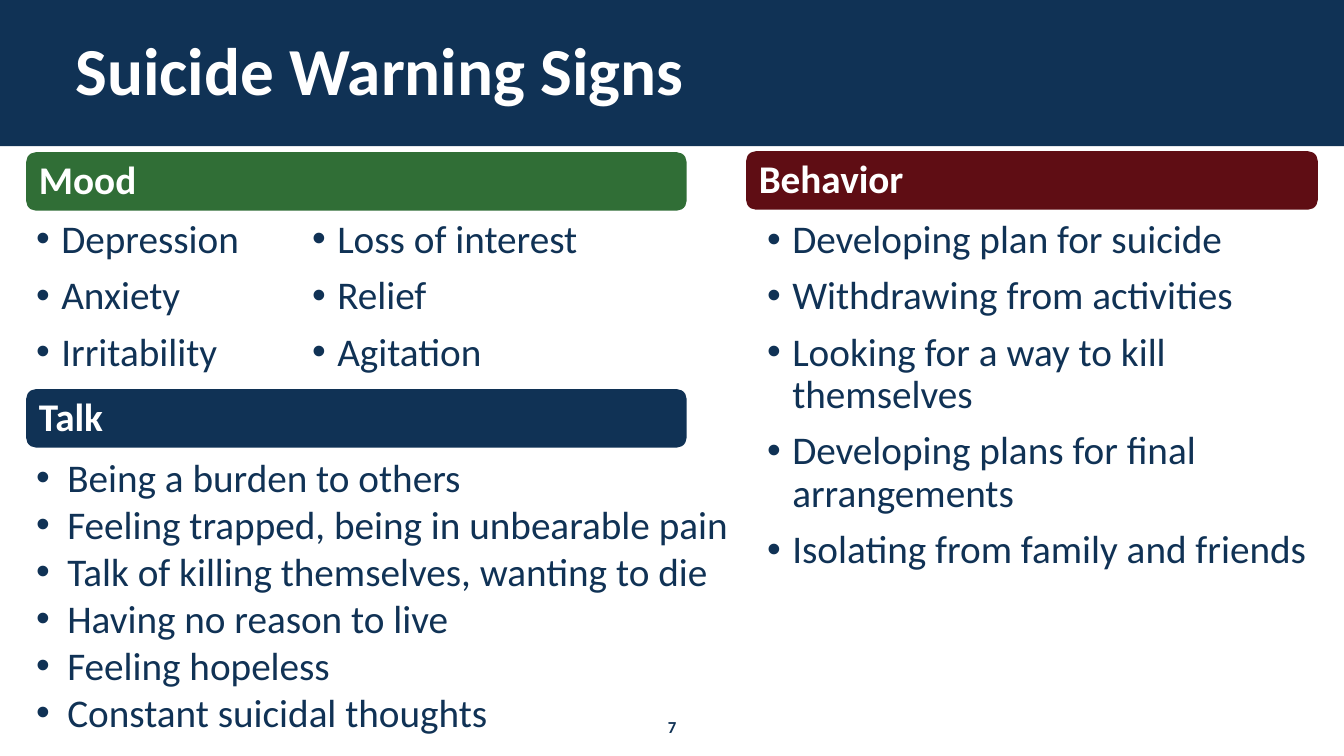
from dataclasses import dataclass

from pptx import Presentation
from pptx import util as u
from pptx.dml import color
from pptx.enum import shapes, text
from pptx.oxml import parse_xml
from pptx.oxml.ns import nsdecls


@dataclass(frozen=True)
class Theme:
    font: str = "Calibri"
    navy: str = "103255"
    green: str = "306E36"
    maroon: str = "5F0D14"
    white: str = "FFFFFF"
    title_size: int = 48
    body_size: int = 28
    number_size: int = 12
    line_spacing: float = 0.9
    paragraph_gap: int = 10


class SlideBuilder:
    """Places elements by percentages of the slide's width and height."""

    def __init__(self, presentation, theme):
        self.presentation = presentation
        self.theme = theme
        self.slide = presentation.slides.add_slide(presentation.slide_layouts[5])

    def box(self, left, top, width, height):
        across = self.presentation.slide_width / 100
        down = self.presentation.slide_height / 100
        return (u.Emu(round(left * across)), u.Emu(round(top * down)),
                u.Emu(round(width * across)), u.Emu(round(height * down)))

    def add_run(self, paragraph, words, size, ink, bold=False):
        run = paragraph.add_run()
        run.text = words
        run.font.name = self.theme.font
        run.font.size = u.Pt(size)
        run.font.bold = bold
        run.font.color.rgb = color.RGBColor.from_string(ink)

    def block(self, kind, place, fill):
        shape = self.slide.shapes.add_shape(kind, *self.box(*place))
        shape.shadow.inherit = False
        shape.fill.solid()
        shape.fill.fore_color.rgb = color.RGBColor.from_string(fill)
        shape.line.fill.background()
        return shape

    def title(self, words, place, banner_place):
        title = self.slide.shapes.title
        title.left, title.top, title.width, title.height = self.box(*place)
        frame = title.text_frame
        frame.word_wrap = True
        frame.auto_size = text.MSO_AUTO_SIZE.NONE
        frame.vertical_anchor = text.MSO_ANCHOR.MIDDLE
        paragraph = frame.paragraphs[0]
        paragraph.alignment = text.PP_ALIGN.LEFT
        paragraph.line_spacing = self.theme.line_spacing
        self.add_run(paragraph, words, self.theme.title_size, self.theme.white, True)
        # The banner lies behind the title
        banner = self.block(shapes.MSO_SHAPE.RECTANGLE, banner_place, self.theme.navy)
        title.element.addprevious(banner.element)

    def heading(self, words, place, fill):
        shape = self.block(shapes.MSO_SHAPE.ROUNDED_RECTANGLE, place, fill)
        shape.text_frame.vertical_anchor = text.MSO_ANCHOR.MIDDLE
        paragraph = shape.text_frame.paragraphs[0]
        paragraph.alignment = text.PP_ALIGN.LEFT
        paragraph.line_spacing = self.theme.line_spacing
        self.add_run(paragraph, words, self.theme.body_size, self.theme.white, True)

    def text_frame(self, place):
        frame = self.slide.shapes.add_textbox(*self.box(*place)).text_frame
        frame.word_wrap = True
        return frame

    def bullets(self, items, place, indent=0.25, spaced=True, columns=1):
        frame = self.text_frame(place)
        if columns > 1:
            frame._txBody.bodyPr.set("numCol", str(columns))
        for index, item in enumerate(items):
            paragraph = frame.add_paragraph() if index else frame.paragraphs[0]
            properties = paragraph._p.get_or_add_pPr()
            properties.set("marL", str(u.Inches(indent)))
            properties.set("indent", str(-u.Inches(indent)))
            properties.append(parse_xml(f'<a:buFont {nsdecls("a")} typeface="Arial"/>'))
            properties.append(parse_xml(f'<a:buChar {nsdecls("a")} char="•"/>'))
            if spaced:
                paragraph.line_spacing = self.theme.line_spacing
                paragraph.space_before = u.Pt(self.theme.paragraph_gap if index else 0)
            self.add_run(paragraph, item, self.theme.body_size, self.theme.navy)

    def page_number(self, number, place):
        paragraph = self.text_frame(place).paragraphs[0]
        paragraph.alignment = text.PP_ALIGN.CENTER
        self.add_run(paragraph, number, self.theme.number_size, self.theme.navy, True)


def main():
    presentation = Presentation()
    presentation.slide_width = u.Inches(13.33)
    presentation.slide_height = u.Inches(7.5)
    theme = Theme()
    builder = SlideBuilder(presentation, theme)

    # Title banner and page number
    builder.title("Suicide Warning Signs", (4.88, 5.33, 90.32, 8.93), (0, 0, 100, 19.33))
    builder.page_number("7", (45.69, 94.13, 8.63, 4))

    left, left_width, heading_height = 1.95, 49.14, 7.73

    # Mood
    builder.heading("Mood", (left, 20.13, left_width, heading_height), theme.green)
    builder.bullets(
        ["Depression", "Anxiety", "Irritability",
         "Loss of interest", "Relief", "Agitation"],
        (left, 28.4, 42.54, 23), columns=2)

    # Talk
    builder.heading("Talk", (left, 51.47, left_width, heading_height), theme.navy)
    builder.bullets(
        ["Being a burden to others",
         "Feeling trapped, being in unbearable pain",
         "Talk of killing themselves, wanting to die",
         "Having no reason to live",
         "Feeling hopeless",
         "Constant suicidal thoughts"],
        (left, 59.33, 53.56, 39), indent=0.31, spaced=False)

    # Behavior
    builder.heading("Behavior", (55.51, 20, 42.54, heading_height), theme.maroon)
    builder.bullets(
        ["Developing plan for suicide",
         "Withdrawing from activities",
         "Looking for a way to kill themselves",
         "Developing plans for final arrangements",
         "Isolating from family and friends"],
        (56.34, 28.4, 43.44, 50))

    presentation.save("out.pptx")


if __name__ == "__main__":
    main()
